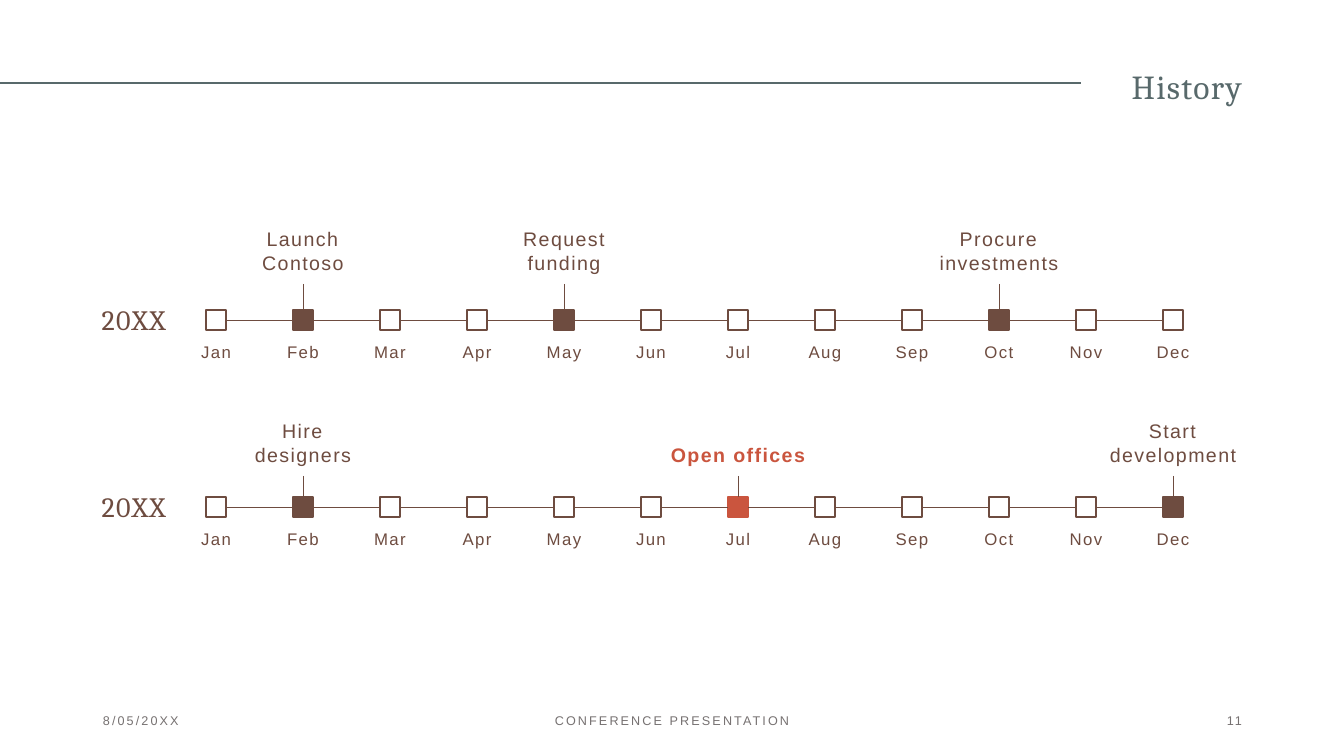
from itertools import pairwise

from lxml.etree import SubElement
from pptx import Presentation
from pptx.dml.color import RGBColor
from pptx.enum.shapes import MSO_CONNECTOR as Connector, MSO_SHAPE as Shape
from pptx.enum.text import MSO_ANCHOR as Anchor, PP_ALIGN as Align
from pptx.oxml.ns import qn
from pptx.util import Emu, Pt

EMU_PER_PX = 12192000 / 1344
SLATE, BROWN, ORANGE, GRAY = "58696B", "6E4C40", "CA553E", "767171"
MONTHS = "Jan Feb Mar Apr May Jun Jul Aug Sep Oct Nov Dec".split()
FIRST_CENTER, MONTH_STEP, MARKER = 216, 87, 20
MONTH_WIDTH, EVENT_WIDTH = 68, 158
HIGHLIGHT = "Open offices"
TIMELINES = [
    (310, 228, 51, 284, {"Feb": "Launch Contoso", "May": "Request\nfunding",
                         "Oct": "Procure investments"}),
    (497, 426, 45, 476, {"Feb": "Hire designers", "Jul": HIGHLIGHT,
                         "Dec": "Start development"}),
]


def px(length):
    return Emu(round(length * EMU_PER_PX))


def color(value):
    return RGBColor.from_string(value)


def add_text(page, text, left, top, width, height, size, shade, font="Arial",
             align=Align.CENTER, anchor=Anchor.MIDDLE, leading=1.0, tracking=1,
             bold=False, inset=10):
    box = page.shapes.add_textbox(px(left), px(top), px(width), px(height))
    frame = box.text_frame
    frame.word_wrap = True
    frame.vertical_anchor = anchor
    frame.margin_left = frame.margin_right = px(inset)
    frame.margin_top = frame.margin_bottom = px(5)
    frame.text = text
    for para in frame.paragraphs:
        para.alignment = align
        para.line_spacing = leading
        for span in para.runs:
            span.font.name = font
            span.font.size = Pt(size)
            span.font.bold = bold
            span.font.color.rgb = color(shade)
            span._r.get_or_add_rPr().set("spc", str(int(tracking * 100)))


def add_line(page, start, end, shade, weight):
    line = page.shapes.add_connector(
        Connector.STRAIGHT, *map(px, start), *map(px, end))
    line.line.color.rgb = color(shade)
    line.line.width = Pt(weight)
    SubElement(line._element.spPr, qn("a:effectLst"))
    return line


def add_marker(page, center, top, shade, filled):
    marker = page.shapes.add_shape(
        Shape.RECTANGLE, px(center - MARKER // 2), px(top), px(MARKER), px(MARKER))
    marker.shadow.inherit = False
    marker.line.color.rgb = color(shade)
    marker.line.width = Pt(1)
    if filled:
        marker.fill.solid()
        marker.fill.fore_color.rgb = color(shade)
    else:
        marker.fill.background()
    return marker


def add_event(page, text, marker, center, marker_top, top, height, stem_top, shade):
    add_text(page, text, center - EVENT_WIDTH // 2, top, EVENT_WIDTH, height, 14,
             shade, anchor=Anchor.BOTTOM, bold=text == HIGHLIGHT, inset=8)
    stem = add_line(page, (center, stem_top), (center, marker_top), BROWN, 0.5)
    stem.end_connect(marker, 0)


def add_timeline(page, top, event_top, event_height, stem_top, events):
    add_text(page, "20XX", 77, top - 16, 113, 55, 20, BROWN, "Cambria", leading=0.9)
    markers = []
    for index, month in enumerate(MONTHS):
        center = FIRST_CENTER + index * MONTH_STEP
        event = events.get(month)
        shade = ORANGE if event == HIGHLIGHT else BROWN
        marker = add_marker(page, center, top, shade, event is not None)
        markers.append(marker)
        add_text(page, month, center - MONTH_WIDTH // 2, top + 31, MONTH_WIDTH, 71,
                 12, BROWN, anchor=Anchor.TOP, leading=0.8)
        if event:
            add_event(page, event, marker, center, top, event_top, event_height,
                      stem_top, shade)
    for before, after in pairwise(markers):
        link = add_line(page, (0, top), (MARKER, top), BROWN, 0.5)
        link.begin_connect(before, 3)
        link.end_connect(after, 1)


def add_footer(page):
    for text, left, width, align in [
        ("8/05/20XX", 93, 302, Align.LEFT),
        ("CONFERENCE PRESENTATION", 445, 454, Align.CENTER),
        ("11", 950, 302, Align.RIGHT),
    ]:
        add_text(page, text, left, 701, width, 40, 9, GRAY, align=align, tracking=1.5)


def main():
    deck = Presentation()
    deck.slide_width, deck.slide_height = px(1344), px(756)
    page = deck.slides.add_slide(deck.slide_layouts[6])
    add_line(page, (0, 83), (1081, 83), SLATE, 1.5)
    add_text(page, "History", 1037, 11, 215, 140, 24, SLATE, "Cambria",
             align=Align.RIGHT, leading=1.25)
    for timeline in TIMELINES:
        add_timeline(page, *timeline)
    add_footer(page)
    deck.save("out.pptx")


if __name__ == "__main__":
    main()
